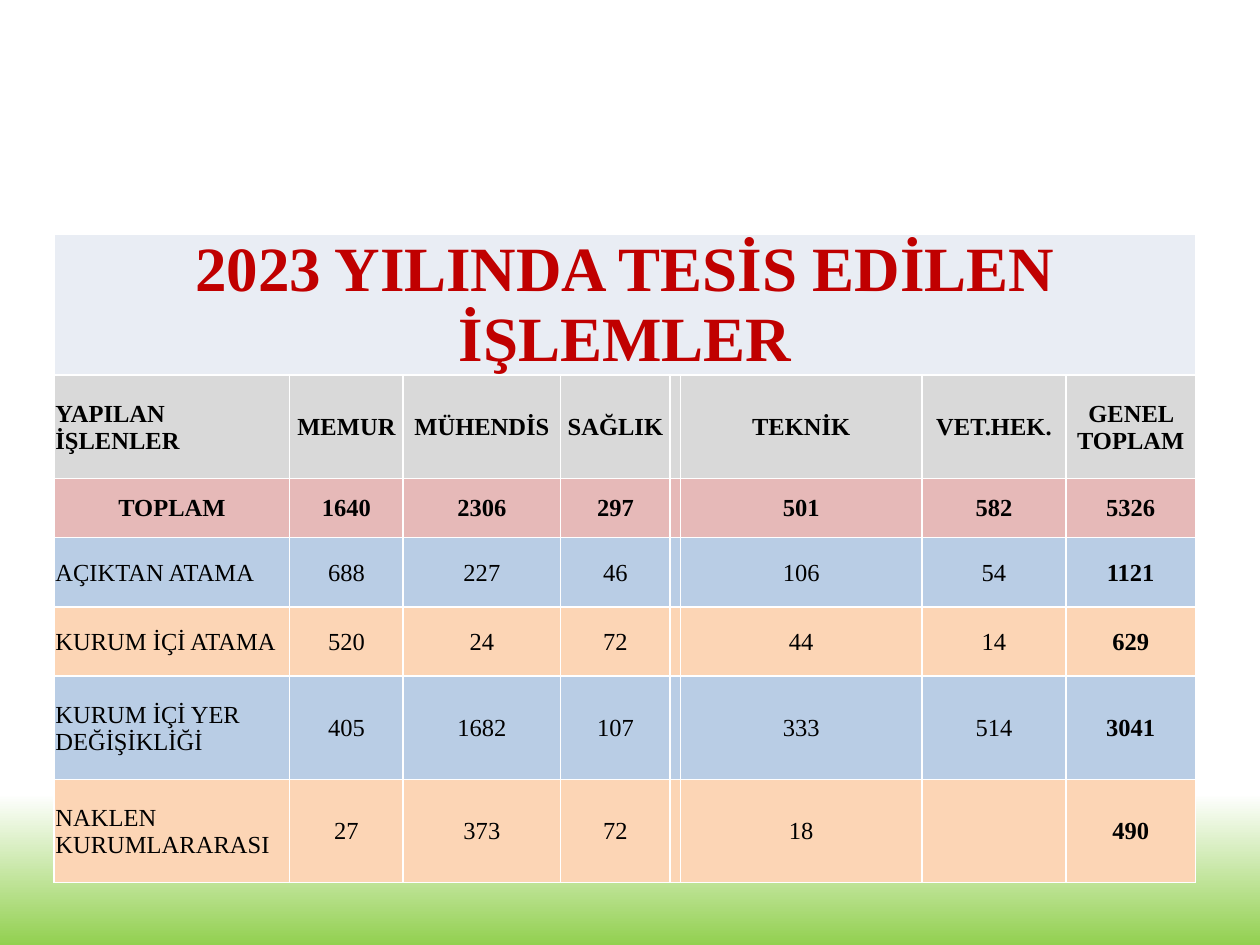
from lxml.etree import SubElement
from pptx import Presentation
from pptx.dml.color import RGBColor
from pptx.enum.text import MSO_ANCHOR, PP_ALIGN
from pptx.oxml.ns import qn
from pptx.util import Inches, Pt


def color(hex_value):
    return RGBColor.from_string(hex_value)


def add_borders(cell, hex_value, width):
    properties = cell._tc.get_or_add_tcPr()
    for side in ("a:lnL", "a:lnR", "a:lnT", "a:lnB"):
        line = SubElement(properties, qn(side), w=str(width))
        fill = SubElement(line, qn("a:solidFill"))
        SubElement(fill, qn("a:srgbClr"), val=hex_value)


prs = Presentation()
prs.slide_width, prs.slide_height = Inches(10), Inches(7.5)
slide = prs.slides.add_slide(prs.slide_layouts[6])

# Background: white fading to green at the bottom
background = slide.background.fill
background.gradient()
background.gradient_angle = 270
for stop, (position, shade) in zip(background.gradient_stops, [(0.84, "FFFFFF"), (1, "92D050")]):
    stop.position = position
    stop.color.rgb = color(shade)

# Table content: row height, fill, texts
rows = [
    (0.99, "E9EDF4", ["2023 YILINDA TESİS EDİLEN İŞLEMLER"] + [""] * 7),
    (0.82, "D9D9D9", ["YAPILAN İŞLENLER", "MEMUR", "MÜHENDİS", "SAĞLIK", "",
                      "TEKNİK", "VET.HEK.", "GENEL TOPLAM"]),
    (0.47, "E6B9B8", ["TOPLAM", "1640", "2306", "297", "", "501", "582", "5326"]),
    (0.55, "B9CDE5", ["AÇIKTAN ATAMA", "688", "227", "46", "", "106", "54", "1121"]),
    (0.55, "FCD5B5", ["KURUM İÇİ ATAMA", "520", "24", "72", "", "44", "14", "629"]),
    (0.82, "B9CDE5", ["KURUM İÇİ YER DEĞİŞİKLİĞİ", "405", "1682", "107", "",
                      "333", "514", "3041"]),
    (0.82, "FCD5B5", ["NAKLEN KURUMLARARASI", "27", "373", "72", "", "18", "", "490"]),
]
column_widths = [1.87, 0.9, 1.25, 0.87, 0.08, 1.92, 1.14, 1.03]
TITLE, HEADER, TOTAL = 0, 1, 2
last_column = len(column_widths) - 1

table = slide.shapes.add_table(
    len(rows), len(column_widths), Inches(0.43), Inches(1.86),
    Inches(sum(column_widths)), Inches(sum(row[0] for row in rows))).table
table.horz_banding = False
for column, width in zip(table.columns, column_widths):
    column.width = Inches(width)

# Fill and format the cells
for r, (height, row_fill, texts) in enumerate(rows):
    table.rows[r].height = Inches(height)
    for c, text in enumerate(texts):
        cell = table.cell(r, c)
        add_borders(cell, "FFFFFF", Pt(1))
        cell.fill.solid()
        cell.fill.fore_color.rgb = color(row_fill)
        cell.vertical_anchor = MSO_ANCHOR.MIDDLE
        cell.margin_left = cell.margin_right = cell.margin_top = Inches(0.01)
        cell.margin_bottom = 0

        cell.text = text
        paragraph = cell.text_frame.paragraphs[0]
        is_label = c == 0 and r not in (TITLE, TOTAL)
        paragraph.alignment = PP_ALIGN.LEFT if is_label else PP_ALIGN.CENTER
        paragraph.font.name = "Times New Roman"
        paragraph.font.size = Pt(36 if r == TITLE else 14)
        paragraph.font.bold = r <= TOTAL or c == last_column
        paragraph.font.color.rgb = color("C00000" if r == TITLE else "000000")

# Title spans the whole width
table.cell(TITLE, 0).merge(table.cell(TITLE, last_column))

prs.save("out.pptx")
